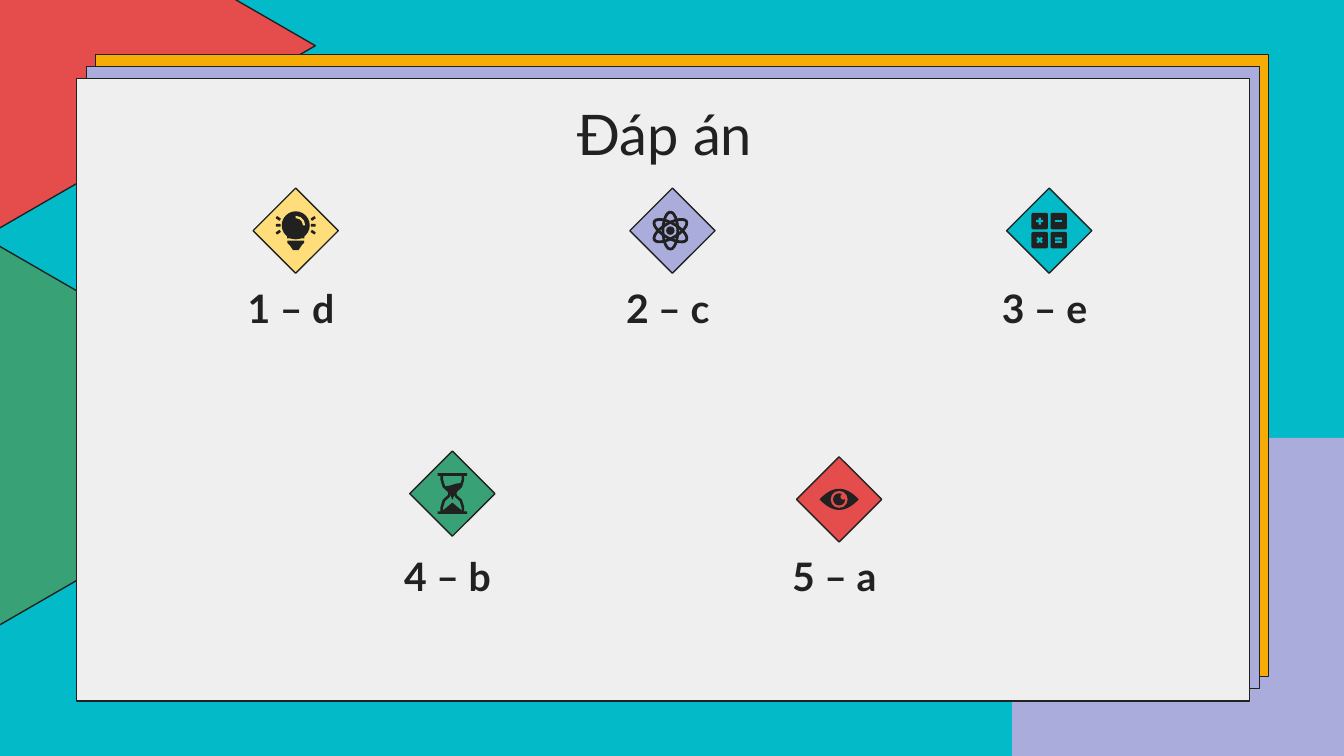
from pptx import Presentation
from pptx.dml.color import RGBColor
from pptx.enum.shapes import MSO_SHAPE
from pptx.enum.text import MSO_ANCHOR, MSO_AUTO_SIZE, PP_ALIGN
from pptx.util import Cm, Pt

RECT, ROUNDED, OVAL = MSO_SHAPE.RECTANGLE, MSO_SHAPE.ROUNDED_RECTANGLE, MSO_SHAPE.OVAL
TRIANGLE, ARC = MSO_SHAPE.ISOSCELES_TRIANGLE, MSO_SHAPE.BLOCK_ARC
PLUS, MINUS = MSO_SHAPE.MATH_PLUS, MSO_SHAPE.MATH_MINUS
TIMES, EQUAL = MSO_SHAPE.MATH_MULTIPLY, MSO_SHAPE.MATH_EQUAL
TOP, BOTTOM, CENTER = MSO_ANCHOR.TOP, MSO_ANCHOR.BOTTOM, PP_ALIGN.CENTER

FONT = "Lato"
COLORS = {"ink": "212121", "teal": "03BAC8", "red": "E54D4D", "green": "39A176",
          "lilac": "AAACDC", "orange": "F7AC05", "yellow": "FEDD7A", "paper": "EFEFEF"}

# Content; lengths in cm
TITLE = "Đáp án "
# label, icon, diamond colour, centre x, diamond centre y, label top
ANSWERS = [
    ("1 – d ", "bulb", "yellow", 5.59, 4.36, 5.28),
    ("2 – c ", "atom", "lilac", 12.71, 4.36, 5.28),
    ("3 – e ", "calculator", "teal", 19.83, 4.36, 5.28),
    ("4 – b ", "hourglass", "green", 8.55, 9.33, 10.34),
    ("5 – a ", "eye", "red", 15.86, 9.44, 10.34),
]
TRIANGLES = [("red", -1.27, -2.49), ("green", -1.04, 4.88)]
PANELS = ["orange", "lilac", "paper"]
PANEL_LEFT, PANEL_TOP, PANEL_STEP_X, PANEL_STEP_Y = 1.81, 1.03, -0.18, 0.23
DIAMOND_SIDE = 1.14


def rgb(name):
    return RGBColor.from_string(COLORS[name])


def paint(shape, fill, line=None, width=0.75):
    shape.shadow.inherit = False
    if fill:
        shape.fill.solid()
        shape.fill.fore_color.rgb = rgb(fill)
    else:
        shape.fill.background()
    if line:
        shape.line.color.rgb = rgb(line)
        shape.line.width = Pt(width)
    else:
        shape.line.fill.background()
    return shape


def add_preset(shapes, kind, left, top, width, height, fill, line=None, turn=0, weight=0.75):
    shape = shapes.add_shape(kind, Cm(left), Cm(top), Cm(width), Cm(height))
    shape.rotation = turn
    return paint(shape, fill, line, weight)


def write(box, text, size, bold, anchor):
    frame = box.text_frame
    frame.word_wrap = True
    frame.auto_size = MSO_AUTO_SIZE.NONE
    frame.vertical_anchor = anchor
    frame.margin_left = frame.margin_right = frame.margin_top = frame.margin_bottom = 0
    line = frame.paragraphs[0]
    line.text = text
    line.alignment = CENTER
    line.font.name, line.font.size, line.font.bold = FONT, Pt(size), bold
    line.font.color.rgb = rgb("ink")


class Icon:
    """Draws pieces at offsets from the icon's centre."""

    def __init__(self, shapes, x, y, back):
        self.shapes, self.x, self.y, self.back = shapes, x, y, back

    def piece(self, kind, dx, dy, width, height, fill="ink", **style):
        return add_preset(self.shapes, kind, self.x + dx - width / 2,
                          self.y + dy - height / 2, width, height, fill, **style)

    def outline(self, points, fill="ink", line=None, weight=0.75):
        corners = [(Cm(self.x + dx), Cm(self.y + dy)) for dx, dy in points]
        builder = self.shapes.build_freeform(*corners[0])
        builder.add_line_segments(corners[1:], close=True)
        return paint(builder.convert_to_shape(), fill, line, weight)


def draw_bulb(icon):
    icon.piece(OVAL, 0, -0.1, 0.53, 0.53)
    icon.piece(RECT, 0, 0.08, 0.33, 0.14)
    shine = icon.piece(ARC, 0, -0.1, 0.36, 0.36, icon.back)
    shine.adjustments[0], shine.adjustments[1], shine.adjustments[2] = 162, 0, 0.12
    base = [(0.16, 0.19), (0.16, 0.23), (0.11, 0.28), (0.05, 0.37)]
    icon.outline(base + [(-dx, dy) for dx, dy in reversed(base)])
    for side in (-1, 1):
        for dy, tilt in ((-0.23, -35), (-0.1, 0), (0.03, 35)):
            icon.piece(ROUNDED, side * 0.33, dy, 0.09, 0.05, turn=side * tilt)


def draw_atom(icon):
    for turn in (0, 60, 120):
        icon.piece(OVAL, -0.04, 0, 0.28, 0.7, None, line="ink", turn=turn, weight=1.5)
    icon.piece(OVAL, -0.04, 0, 0.16, 0.16)


def draw_calculator(icon):
    for index, sign in enumerate((PLUS, MINUS, TIMES, EQUAL)):
        row, column = divmod(index, 2)
        dx, dy = 0.36 * column - 0.18, 0.36 * row - 0.18
        icon.piece(ROUNDED, dx, dy, 0.31, 0.31).adjustments[0] = 0.1
        icon.piece(sign, dx, dy, 0.18, 0.18, icon.back)


def draw_hourglass(icon):
    for dy in (-0.36, 0.36):
        icon.piece(ROUNDED, 0, dy, 0.56, 0.05)
    quarter = [(0.2, -0.36), (0.2, -0.26), (0.16, -0.13), (0.07, -0.05), (0.05, 0)]
    right = quarter + [(dx, -dy) for dx, dy in reversed(quarter[:-1])]
    icon.outline(right + [(-dx, dy) for dx, dy in reversed(right)], None, "ink", 1.4)
    icon.outline([(-0.16, -0.13), (-0.05, -0.15), (0.08, -0.19), (0.18, -0.2), (0.14, -0.1),
                  (0.06, -0.03), (0, 0.12), (-0.06, -0.03)])
    icon.outline([(-0.2, 0.34), (0, 0.17), (0.2, 0.34)])


def draw_eye(icon):
    steps = [n / 8 for n in range(-8, 9)]
    lid = [(0.37 * t, -0.2 * (1 - t * t)) for t in steps]
    icon.outline(lid + [(dx, -dy) for dx, dy in reversed(lid[1:-1])])
    icon.piece(OVAL, 0, 0, 0.32, 0.32, icon.back)
    icon.piece(OVAL, 0, 0, 0.23, 0.23)
    icon.piece(OVAL, 0.08, -0.05, 0.11, 0.11, icon.back)


DRAW = {"bulb": draw_bulb, "atom": draw_atom, "calculator": draw_calculator,
        "hourglass": draw_hourglass, "eye": draw_eye}

deck = Presentation()
deck.slide_width, deck.slide_height = Cm(25.4), Cm(14.29)
slide = deck.slides.add_slide(deck.slide_layouts[5])
slide.background.fill.solid()
slide.background.fill.fore_color.rgb = rgb("teal")

# Backdrop and stacked panels
for color, left, top in TRIANGLES:
    add_preset(slide.shapes, TRIANGLE, left, top, 7.75, 6.71, color, "ink", 90)
add_preset(slide.shapes, RECT, 19.13, 8.28, 6.27, 6.01, "lilac")
for index, color in enumerate(PANELS):
    add_preset(slide.shapes, RECT, PANEL_LEFT + index * PANEL_STEP_X,
               PANEL_TOP + index * PANEL_STEP_Y, 22.17, 11.76, color, "ink")

# Title, brought in front of the panels
title = slide.shapes.title
title.left, title.top, title.width, title.height = Cm(1.98), Cm(1.88), Cm(21.44), Cm(1.6)
write(title, TITLE, 30, False, TOP)
slide.shapes._spTree.append(title._element)

# Answers: diamond with icon, label below
for label, icon_name, color, x, y, label_top in ANSWERS:
    badge = slide.shapes.add_group_shape().shapes
    icon = Icon(badge, x, y, color)
    icon.piece(RECT, 0, 0, DIAMOND_SIDE, DIAMOND_SIDE, color, line="ink", turn=315)
    DRAW[icon_name](icon)
    answer = slide.shapes.add_textbox(Cm(x - 2.97), Cm(label_top), Cm(5.94), Cm(0.99))
    write(answer, label, 21, True, BOTTOM)

deck.save("out.pptx")
